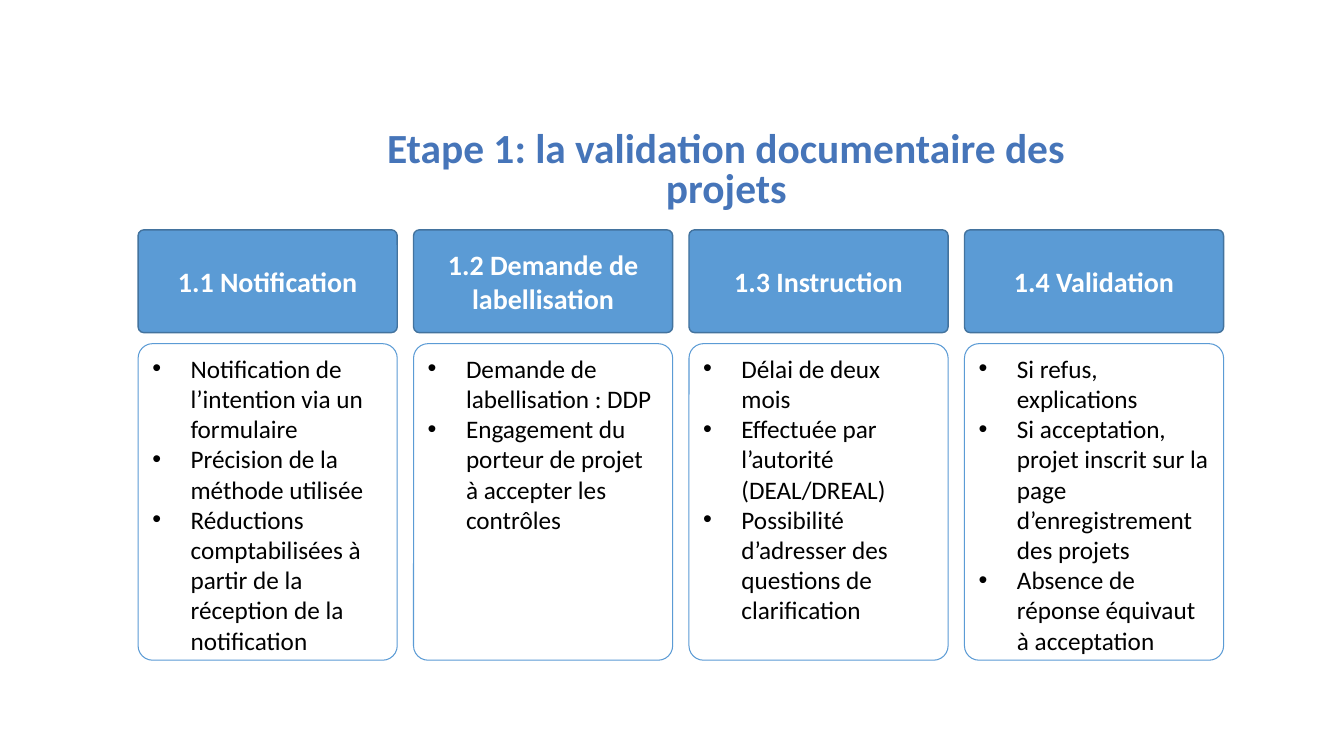
from lxml.etree import SubElement
from pptx import Presentation
from pptx.dml.color import RGBColor
from pptx.enum.shapes import MSO_SHAPE
from pptx.enum.text import MSO_ANCHOR, MSO_AUTO_SIZE, PP_ALIGN
from pptx.oxml.ns import qn
from pptx.util import Inches, Pt

WHITE = RGBColor(0xFF, 0xFF, 0xFF)
BLACK = RGBColor(0x00, 0x00, 0x00)
TITLE_BLUE = RGBColor(0x46, 0x75, 0xB9)
STEP_BLUE = RGBColor(0x5B, 0x9B, 0xD5)
EDGE_BLUE = RGBColor(0x43, 0x73, 0x9E)

FONT = "Calibri"
CORNER = 0.056
INDENT = Inches(0.38)

GRID_LEFT, GRID_TOP = 1.37, 2.28
COLUMN_WIDTH, COLUMN_PITCH = 2.57, 2.732
HEADER_HEIGHT, ROW_GAP, DETAIL_HEIGHT = 1.02, 0.11, 3.14

TITLE = "Etape 1: la validation documentaire des projets"
STEPS = [
    ("1.1 Notification", [
        "Notification de l’intention via un formulaire",
        "Précision de la méthode utilisée",
        "Réductions comptabilisées à partir de la réception de la notification",
    ]),
    ("1.2 Demande de labellisation", [
        "Demande de labellisation : DDP",
        "Engagement du porteur de projet à accepter les contrôles",
    ]),
    ("1.3 Instruction", [
        "Délai de deux mois",
        "Effectuée par l’autorité (DEAL/DREAL)",
        "Possibilité d’adresser des questions de clarification",
    ]),
    ("1.4 Validation", [
        "Si refus, explications",
        "Si acceptation, projet inscrit sur la page d’enregistrement des projets",
        "Absence de réponse équivaut à acceptation",
    ]),
]


def add_run(paragraph, text, size, color, bold=False):
    run = paragraph.add_run()
    run.text = text
    run.font.name = FONT
    run.font.size = Pt(size)
    run.font.bold = bold
    run.font.color.rgb = color


def add_bullet(paragraph):
    properties = paragraph._p.get_or_add_pPr()
    properties.set("marL", str(INDENT))
    properties.set("indent", str(-INDENT))
    SubElement(properties, qn("a:buFont")).set("typeface", "Arial")
    SubElement(properties, qn("a:buChar")).set("char", "•")


def add_title(slide, left, top, width, height):
    title = slide.shapes.title
    title.left, title.top = Inches(left), Inches(top)
    title.width, title.height = Inches(width), Inches(height)
    title.fill.solid()
    title.fill.fore_color.rgb = WHITE
    frame = title.text_frame
    frame.word_wrap = True
    frame.auto_size = MSO_AUTO_SIZE.NONE
    frame.vertical_anchor = MSO_ANCHOR.TOP
    paragraph = frame.paragraphs[0]
    paragraph.alignment = PP_ALIGN.CENTER
    paragraph.line_spacing = 0.8
    add_run(paragraph, TITLE, 29.6, TITLE_BLUE, bold=True)


def add_card(slide, left, top, height, line_color, line_width, anchor):
    card = slide.shapes.add_shape(
        MSO_SHAPE.ROUNDED_RECTANGLE,
        Inches(left), Inches(top), Inches(COLUMN_WIDTH), Inches(height),
    )
    card.adjustments[0] = CORNER
    card.shadow.inherit = False
    card.fill.background()
    card.line.color.rgb = line_color
    card.line.width = Pt(line_width)
    card.text_frame.word_wrap = True
    card.text_frame.vertical_anchor = anchor
    return card


def add_header(slide, left, top, text):
    header = add_card(slide, left, top, HEADER_HEIGHT, EDGE_BLUE, 1, MSO_ANCHOR.MIDDLE)
    header.fill.solid()
    header.fill.fore_color.rgb = STEP_BLUE
    paragraph = header.text_frame.paragraphs[0]
    paragraph.alignment = PP_ALIGN.CENTER
    add_run(paragraph, text, 20, WHITE, bold=True)


def add_details(slide, left, top, items):
    details = add_card(slide, left, top, DETAIL_HEIGHT, STEP_BLUE, 0.75, MSO_ANCHOR.TOP)
    frame = details.text_frame
    for index, item in enumerate(items):
        paragraph = frame.add_paragraph() if index else frame.paragraphs[0]
        paragraph.alignment = PP_ALIGN.LEFT
        add_bullet(paragraph)
        add_run(paragraph, item, 18, BLACK)


def add_steps(slide, left, top):
    detail_top = top + HEADER_HEIGHT + ROW_GAP
    for column, (heading, items) in enumerate(STEPS):
        column_left = left + column * COLUMN_PITCH
        add_header(slide, column_left, top, heading)
        add_details(slide, column_left, detail_top, items)


def main():
    presentation = Presentation()
    presentation.slide_width = Inches(13.33)
    presentation.slide_height = Inches(7.5)
    slide = presentation.slides.add_slide(presentation.slide_layouts.get_by_name("Title Only"))
    add_title(slide, 3.12, 1.26, 8.17, 0.92)
    add_steps(slide, GRID_LEFT, GRID_TOP)
    presentation.save("out.pptx")


if __name__ == "__main__":
    main()
